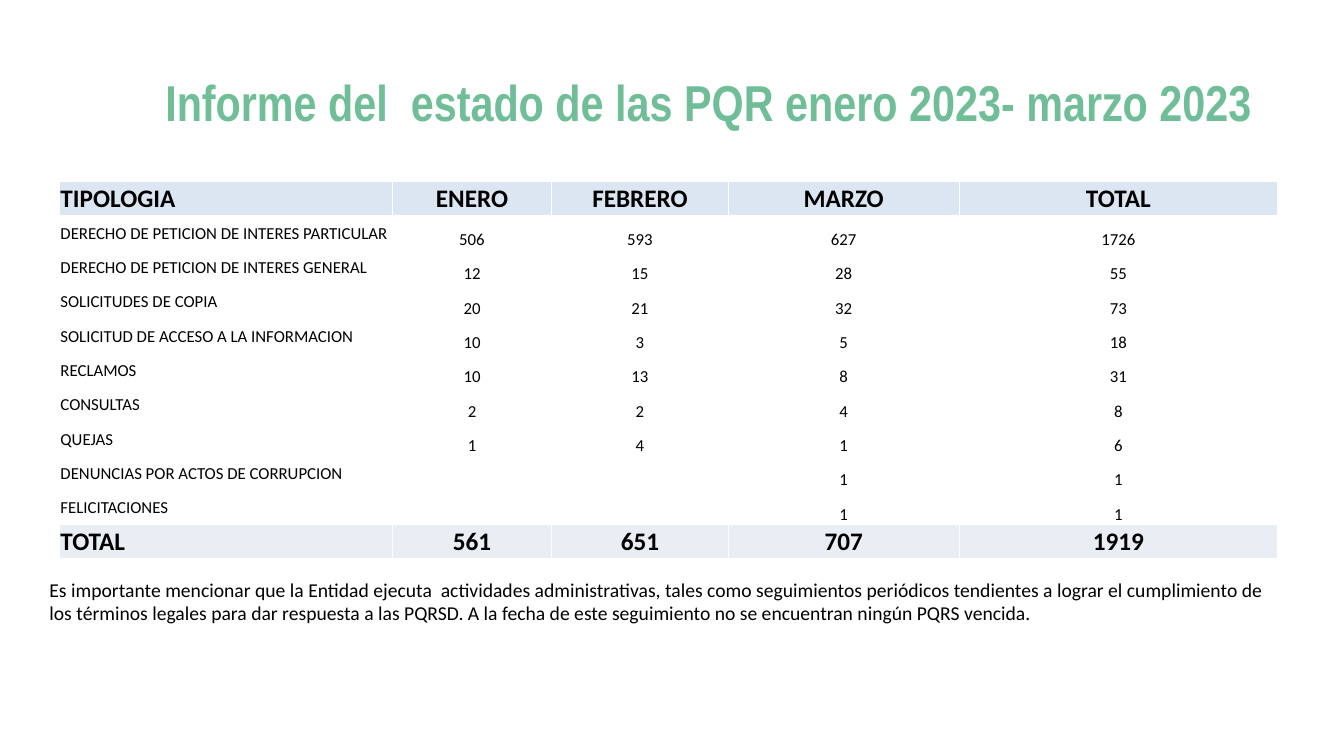
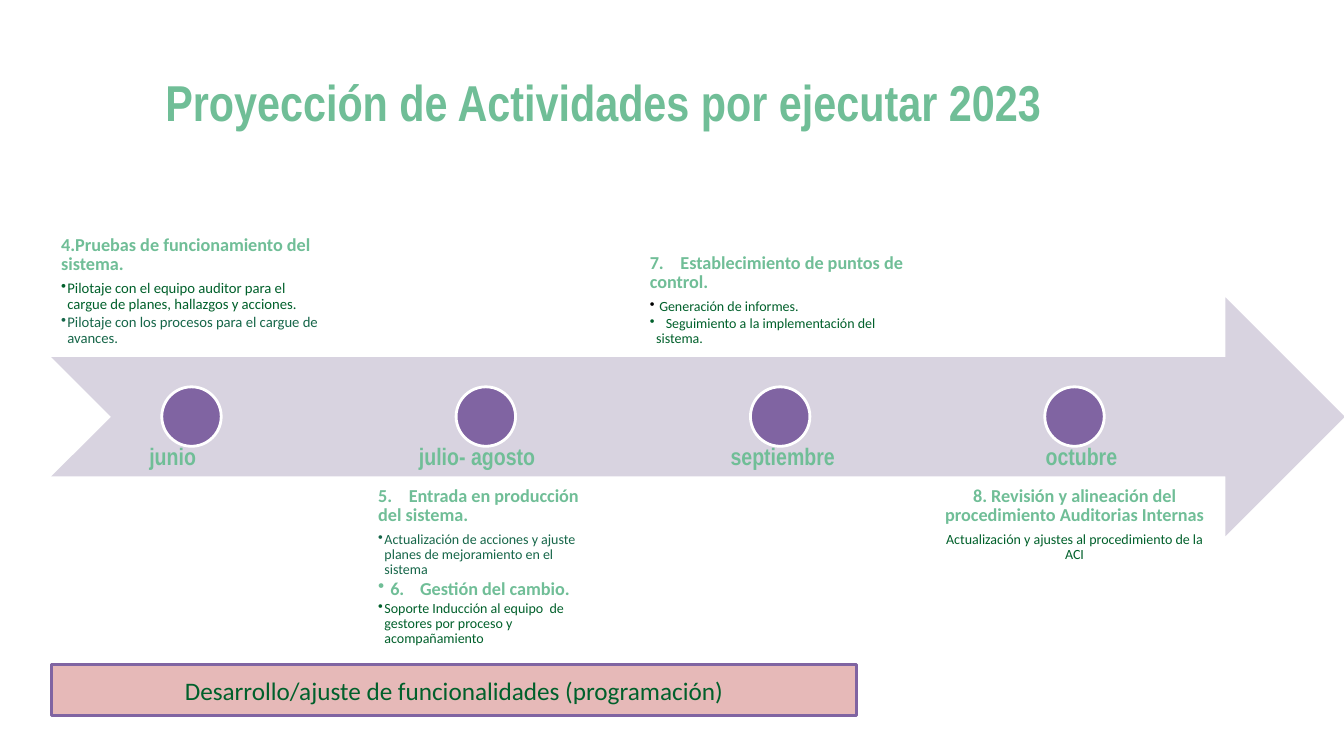
from dataclasses import dataclass

from lxml import etree
from pptx import Presentation
from pptx import util as u
from pptx.dml.color import RGBColor
from pptx.enum import shapes, text
from pptx.oxml import ns

MID, LOW, TOP = text.MSO_ANCHOR.MIDDLE, text.MSO_ANCHOR.BOTTOM, text.MSO_ANCHOR.TOP
LEFT, MIDST = text.PP_ALIGN.LEFT, text.PP_ALIGN.CENTER
KIND = shapes.MSO_SHAPE


@dataclass(frozen=True)
class Theme:
    cols: int = 160
    rows: int = 90
    wide: float = 13.33
    high: float = 7.5
    face: str = "Calibri"
    slim: str = "Arial Narrow"
    green: str = "70BE97"
    dark: str = "00602B"
    teal: str = "166649"
    ink: str = "000000"
    white: str = "FFFFFF"
    plum: str = "8064A2"
    mauve: str = "D8D3E0"
    rose: str = "E6B9B8"
    top: str = "DCE6F2"
    foot: str = "E9EDF4"
    title: float = 36
    big: float = 18
    month: float = 17
    note: float = 14
    head: float = 13
    cell: float = 12
    body: float = 10.5
    small: float = 10


@dataclass
class Para:
    words: str
    size: float
    tone: str
    bold: bool = False
    face: str = Theme.face
    align: int = LEFT
    line: float = 1
    after: float = 0
    hang: float = 0
    mark: str = ""
    tabs: tuple = ()


class Deck:
    """Hold the style and the current slide, and draw each kind of element."""

    def __init__(self, theme):
        self.look = theme
        self.file = Presentation()
        self.file.slide_width = u.Inches(theme.wide)
        self.file.slide_height = u.Inches(theme.high)
        self.page = None

    def x(self, cols):
        return round(self.file.slide_width * cols / self.look.cols)

    def y(self, rows):
        return round(self.file.slide_height * rows / self.look.rows)

    def area(self, left, top, wide, high):
        return self.x(left), self.y(top), self.x(wide), self.y(high)

    def start(self, title, wide):
        look = self.look
        self.page = self.file.slides.add_slide(self.file.slide_layouts[6])
        para = Para(title, look.title, look.green, True, look.slim, line=0.9)
        self.text((18.5, 6.84, wide, 11.28), [para], MID)

    def fill(self, frame, paras):
        for spot, para in enumerate(paras):
            p = frame.add_paragraph() if spot else frame.paragraphs[0]
            p.text = para.words
            p.alignment = para.align
            p.line_spacing = para.line
            p.space_after = u.Pt(para.after)
            props = p._p.get_or_add_pPr()
            if para.hang:
                inset = self.x(para.hang)
                props.set("marL", str(inset))
                props.set("indent", str(-inset))
                tint = etree.SubElement(props, ns.qn("a:buClr"))
                etree.SubElement(tint, ns.qn("a:srgbClr"), val=para.mark or para.tone)
                etree.SubElement(props, ns.qn("a:buChar"), char="•")
            if para.tabs:
                stops = etree.SubElement(props, ns.qn("a:tabLst"))
                for stop in para.tabs:
                    etree.SubElement(stops, ns.qn("a:tab"), pos=str(self.x(stop)), algn="l")
            font = p.font
            font.name, font.size, font.bold = para.face, u.Pt(para.size), para.bold
            font.color.rgb = RGBColor.from_string(para.tone)

    def text(self, box, paras, anchor=TOP, pad=None):
        frame = self.page.shapes.add_textbox(*self.area(*box)).text_frame
        frame.word_wrap = True
        frame.vertical_anchor = anchor
        if pad:
            frame.margin_top = frame.margin_bottom = self.y(pad)
        self.fill(frame, paras)

    def shape(self, kind, box, tone, edge=None, para=None):
        item = self.page.shapes.add_shape(kind, *self.area(*box))
        item.shadow.inherit = False
        item.fill.solid()
        item.fill.fore_color.rgb = RGBColor.from_string(tone)
        if edge:
            item.line.color.rgb = RGBColor.from_string(edge)
            item.line.width = u.Pt(2)
        else:
            item.line.fill.background()
        if para:
            item.text_frame.vertical_anchor = MID
            self.fill(item.text_frame, [para])

    def table(self, box, cols, data):
        look, last = self.look, len(data) - 1
        grid = self.page.shapes.add_table(len(data), len(cols), *self.area(*box)).table
        grid.horz_banding = False
        for col, wide in zip(grid.columns, cols):
            col.width = self.x(wide)
        for r, row in enumerate(data):
            tone = {0: look.top, last: look.foot}.get(r)
            for c, words in enumerate(row):
                cell = grid.cell(r, c)
                cell.margin_left = cell.margin_right = cell.margin_top = self.x(0.1)
                cell.margin_bottom = 0
                cell.vertical_anchor = MID if tone or c == 0 else LOW
                if tone:
                    cell.fill.solid()
                    cell.fill.fore_color.rgb = RGBColor.from_string(tone)
                else:
                    cell.fill.background()
                size = look.big if tone else look.cell
                align = MIDST if c else LEFT
                self.fill(cell.text_frame, [Para(words, size, look.ink, bool(tone), align=align)])

    def head(self, words, **more):
        return Para(words, self.look.head, self.look.green, True, line=0.9, after=4.5, **more)

    def item(self, words, tone, size=Theme.small, **more):
        return Para(words, size, tone, line=0.9, after=1.5, hang=0.75, **more)


def report(deck):
    look = deck.look
    deck.start("Informe del  estado de las PQR enero 2023- marzo 2023", 132.6)
    data = [
        ("TIPOLOGIA", "ENERO", "FEBRERO", "MARZO", "TOTAL"),
        ("DERECHO DE PETICION DE INTERES PARTICULAR", "506", "593", "627", "1726"),
        ("DERECHO DE PETICION DE INTERES GENERAL", "12", "15", "28", "55"),
        ("SOLICITUDES DE COPIA", "20", "21", "32", "73"),
        ("SOLICITUD DE ACCESO A LA INFORMACION", "10", "3", "5", "18"),
        ("RECLAMOS", "10", "13", "8", "31"),
        ("CONSULTAS", "2", "2", "4", "8"),
        ("QUEJAS", "1", "4", "1", "6"),
        ("DENUNCIAS POR ACTOS DE CORRUPCION", "", "", "1", "1"),
        ("FELICITACIONES", "", "", "1", "1"),
        ("TOTAL", "561", "651", "707", "1919"),
    ]
    deck.table((7.1, 21.6, 145, 45), (39.6, 19, 21, 27.5, 37.9), data)
    note = (
        "Es importante mencionar que la Entidad ejecuta  actividades administrativas, "
        "tales como seguimientos periódicos tendientes a lograr el cumplimiento de los "
        "términos legales para dar respuesta a las PQRSD. A la fecha de este seguimiento "
        "no se encuentran ningún PQRS vencida."
    )
    deck.text((4.7, 68.16, 147.3, 6.84), [Para(note, look.note, look.ink)])


def plan(deck):
    look, item = deck.look, deck.item
    deck.start("Proyección de Actividades por ejecutar 2023", 110.3)
    deck.shape(KIND.NOTCHED_RIGHT_ARROW, (6.1, 35.4, 154, 28.44), look.mauve)
    change = deck.head("6.\tGestión del cambio.", hang=1.44, tabs=(5,))
    change.after = 1.5
    close = deck.head("8. Revisión y alineación del procedimiento Auditorias Internas", align=MIDST)
    last = Para("Actualización y ajustes al procedimiento de la ACI", look.small,
                look.dark, align=MIDST, line=0.9, after=3.5)
    steps = [
        (33.4, [
            deck.head("4.Pruebas de funcionamiento del sistema."),
            item("Pilotaje con el equipo auditor para el cargue de planes, hallazgos y acciones.",
                 look.dark, look.body),
            item("Pilotaje con los procesos para el cargue de avances.", look.teal, look.body),
        ]),
        (28, [
            deck.head("5.\tEntrada en producción del sistema.", tabs=(3.65,)),
            item("Actualización de acciones y ajuste planes de mejoramiento en el sistema",
                 look.teal),
            change,
            item("Soporte Inducción al equipo  de gestores por proceso y acompañamiento",
                 look.dark),
        ]),
        (33.4, [
            deck.head("7.\tEstablecimiento de puntos de control.", tabs=(3.65,)),
            item(" Generación de informes.", look.dark, mark=look.ink),
            item("\tSeguimiento a la implementación del sistema.", look.dark, tabs=(1.9,)),
        ]),
        (33.4, [close, last]),
    ]
    dot = 7.08
    for spot, (wide, paras) in enumerate(steps):
        mid = 22.8 + 35.04 * spot
        top, anchor = (56.7, TOP) if spot % 2 else (14.04, LOW)
        deck.text((mid - wide / 2, top, wide, 28.44), paras, anchor, 1.2)
        deck.shape(KIND.OVAL, (mid - dot / 2, 46.05, dot, dot), look.plum, look.white)
    bar = Para("Desarrollo/ajuste de funcionalidades (programación)", look.big,
               look.dark, align=MIDST)
    deck.shape(KIND.RECTANGLE, (6.1, 79.1, 95.9, 6.1), look.rose, look.plum, bar)
    months = Para("\tjunio\tjulio- agosto\tseptiembre\toctubre", look.month, look.green,
                  True, look.slim, line=0.8, tabs=(7.7, 39.8, 76.9, 114.4))
    deck.text((8.9, 51.7, 129.5, 5.76), [months], MID)


def main():
    deck = Deck(Theme())
    report(deck)
    plan(deck)
    deck.file.save("out.pptx")


if __name__ == "__main__":
    main()
